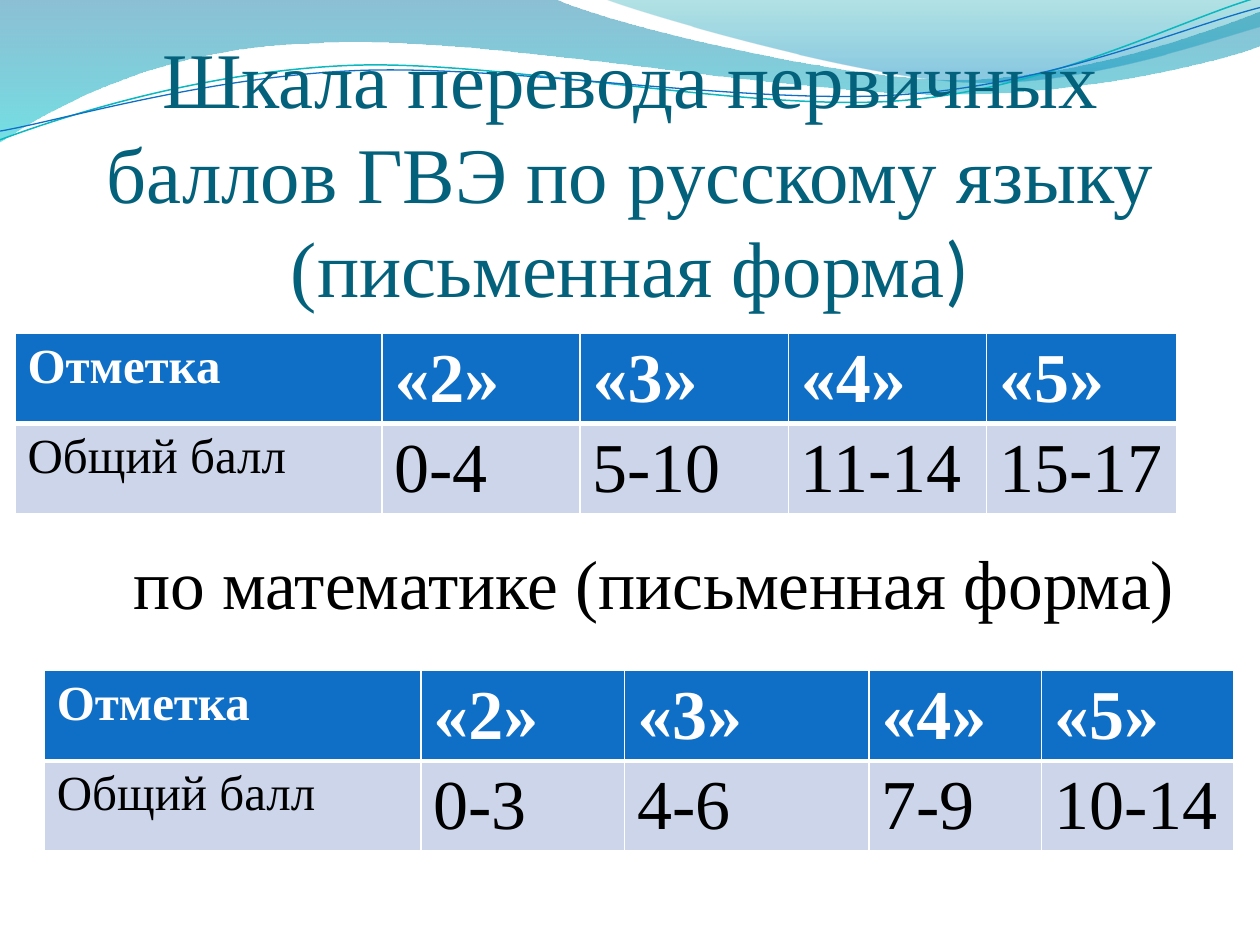
import math
from lxml import etree
from pptx import Presentation
from pptx.dml.color import RGBColor
from pptx.enum.text import MSO_ANCHOR, PP_ALIGN
from pptx.oxml import parse_xml
from pptx.oxml.ns import qn
from pptx.util import Pt

CENTER = PP_ALIGN.CENTER
BOTTOM = MSO_ANCHOR.BOTTOM
MIDDLE = MSO_ANCHOR.MIDDLE
NS = "http://schemas.openxmlformats.org/drawingml/2006/main"
SERIF = "Times New Roman"
TILT = 2.7


def color(value):
    return RGBColor.from_string(value)


def add_run(p, text, size, value, font=SERIF, bold=False):
    r = p.add_run()
    r.text = text
    r.font.size = Pt(size)
    r.font.name = font
    r.font.bold = bold
    r.font.color.rgb = color(value)


prs = Presentation()
prs.slide_width, prs.slide_height = Pt(720), Pt(540)
s = prs.slides.add_slide(prs.slide_layouts[6])

waves = [
    ([(0, 0), (316.8, -0.7),
      (342.7, 12.2, 478.1, 45.4, 545.8, 45.4),
      (614.2, 45.4, 689.8, 18.7, 720, 6.5), (720.7, 25.9),
      (707.8, 31.7, 626.4, 54.7, 537.1, 54),
      (447.8, 54, 275, 20.2, 185, 24.5),
      (92.9, 25.9, 33.1, 59.8, -0.7, 81.4)],
     [(0, "0074A1", 45), (100, "00C6CF", 55)], None),
    ([(344.9, -0.7),
      (366.5, 7.9, 491, 44.6, 553.7, 46.8),
      (616.3, 49.7, 691.9, 23, 720, 15.1), (720, 0)],
     [(0, "00A1A9", 30), (80, "008BBF", 45)], None),
    ([(0, 79.9),
      (34.6, 67, 113.8, 41, 199.4, 37.4),
      (284.4, 33.8, 427, 64.1, 513.4, 57.6),
      (599.8, 51.1, 675.4, 10.8, 718.6, -1.4)],
     None, ("0AB8BF", 0.85, 41.4)),
    ([(0, 74.9),
      (33.8, 69.1, 118.1, 43.9, 203.8, 40.3),
      (290.2, 36.7, 429.8, 60.5, 516.2, 54),
      (601.9, 48.2, 677.5, 15.1, 720, 4.3)],
     None, ("0F6FC6", 0.75, 42.5)),
]
for segments, stops, line in waves:
    points = [pair for seg in segments for pair in zip(seg[::2], seg[1::2])]
    if line:
        cx, cy = 359.3, line[2]
        cos, sin = math.cos(math.radians(TILT)), math.sin(math.radians(TILT))
        points = [(cx + (x - cx) * cos - (y - cy) * sin,
                   cy + (x - cx) * sin + (y - cy) * cos) for x, y in points]
    fb = s.shapes.build_freeform(Pt(points[0][0]), Pt(points[0][1]))
    fb.add_line_segments([(Pt(x), Pt(y)) for x, y in points[1:]], close=bool(stops))
    sp = fb.convert_to_shape()
    sp.shadow.inherit = False
    steps = sp.element.findall(".//" + qn("a:lnTo"))
    for seg in segments[1:]:
        group, steps = steps[:len(seg) // 2], steps[len(seg) // 2:]
        if len(group) == 3:
            curve = parse_xml(f'<a:cubicBezTo xmlns:a="{NS}"/>')
            group[0].addprevious(curve)
            for step in group:
                curve.append(step[0])
                step.getparent().remove(step)
    sp.fill.background()
    if stops:
        sp.line.fill.background()
        gs = "".join(
            f'<a:gs pos="{pos * 1000}"><a:srgbClr val="{value}">'
            f'<a:alpha val="{alpha * 1000}"/></a:srgbClr></a:gs>'
            for pos, value, alpha in stops)
        grad = parse_xml(f'<a:gradFill xmlns:a="{NS}" rotWithShape="1"><a:gsLst>{gs}'
                         '</a:gsLst><a:lin ang="5400000" scaled="0"/></a:gradFill>')
        pr = sp.element.spPr
        pr.replace(pr.find(qn("a:noFill")), grad)
    else:
        sp.line.color.rgb = color(line[0])
        sp.line.width = Pt(line[1])
        sp.rotation = 360 - TILT

texts = [
    ((36, 77, 648, 102.2), (0, 3.6, 0, 0), BOTTOM,
     [("Шкала перевода первичных баллов ГВЭ по русскому языку (письменная форма",
       45, "04617B", SERIF), (")", 45, "04617B", "Calibri")]),
    ((49.7, 287.3, 648, 90), (7.2, 3.6, 7.2, 3.6), MIDDLE,
     [("по математике (письменная форма)", 39.6, "000000", SERIF)]),
]
for box, insets, anchor, runs in texts:
    sp = s.shapes.add_textbox(*map(Pt, box))
    tf = sp.text_frame
    tf.word_wrap = True
    tf.vertical_anchor = anchor
    tf.margin_left, tf.margin_top, tf.margin_right, tf.margin_bottom = map(Pt, insets)
    p = tf.paragraphs[0]
    p.alignment = CENTER
    for run in runs:
        add_run(p, *run)

marks = ["Отметка", "«2»", "«3»", "«4»", "«5»"]
tables = [
    (8.6, 190.5, [209.7, 113.2, 119, 113.3, 108.7],
     ["Общий балл", "0-4", "5-10", "11-14", "15-17"]),
    (25.3, 383.2, [215.2, 116.5, 139.6, 98.6, 110.1],
     ["Общий балл", "0-3", "4-6", "7-9", "10-14"]),
]
row_styles = [("0F6FC6", "FFFFFF", True, (1, 1, 1, 3)),
              ("CCD5EA", "000000", False, (1, 1, 3, 1))]
for left, top, widths, scores in tables:
    frame = s.shapes.add_table(2, 5, Pt(left), Pt(top), Pt(sum(widths)), Pt(102.8))
    table = frame.table
    for col, width in zip(table.columns, widths):
        col.width = Pt(width)
    for i, (values, (fill, ink, bold, borders)) in enumerate(zip((marks, scores), row_styles)):
        for j, value in enumerate(values):
            cell = table.cell(i, j)
            cell.margin_bottom = Pt(0)
            cell.fill.solid()
            cell.fill.fore_color.rgb = color(fill)
            add_run(cell.text_frame.paragraphs[0], value, 40 if j else 28, ink, bold=bold)
            tcPr = cell._tc.get_or_add_tcPr()
            for k, (side, width) in enumerate(zip("LRTB", borders)):
                ln = etree.Element(qn(f"a:ln{side}"), w=str(Pt(width)))
                solid = etree.SubElement(ln, qn("a:solidFill"))
                etree.SubElement(solid, qn("a:srgbClr"), val="FFFFFF")
                tcPr.insert(k, ln)

prs.save("out.pptx")
